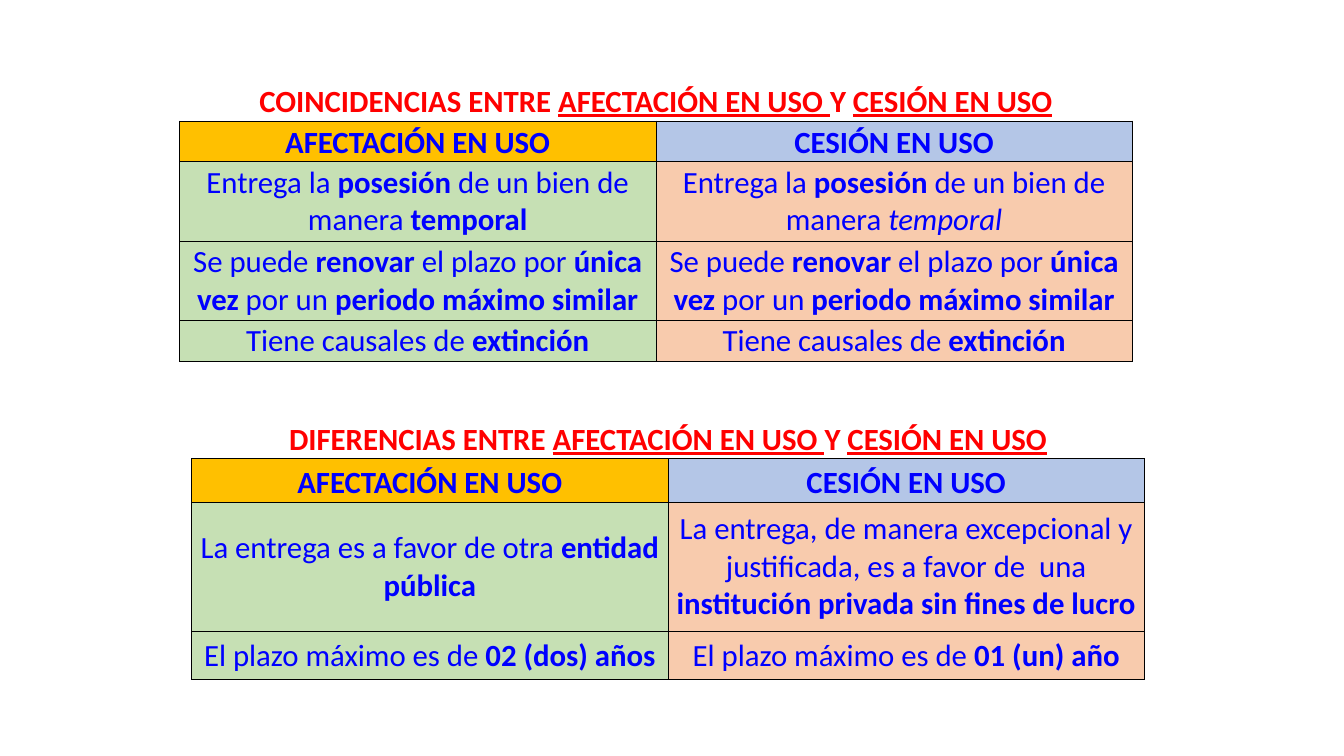
from lxml import etree
from pptx import Presentation
from pptx.dml.color import RGBColor
from pptx.enum.text import MSO_ANCHOR, PP_ALIGN
from pptx.oxml.ns import qn
from pptx.util import Inches, Pt

BOTTOM, MIDDLE = MSO_ANCHOR.BOTTOM, MSO_ANCHOR.MIDDLE
CENTER = PP_ALIGN.CENTER
RED = RGBColor(0xFF, 0x00, 0x00)
BLUE = RGBColor(0x00, 0x00, 0xFF)
HEADS = RGBColor(0xFF, 0xC0, 0x00), RGBColor(0xB4, 0xC6, 0xE7)
BODY = RGBColor(0xC6, 0xE0, 0xB4), RGBColor(0xF8, 0xCB, 0xAD)
PLAIN = "{2D5ABB26-0587-4C30-8999-92F81FD0307C}"  # no style, no grid

NAMES = "AFECTACIÓN EN USO", "CESIÓN EN USO"
RENEW = "Se puede *renovar* el plazo por *única vez* por un *periodo máximo similar*"
ENDS = "Tiene causales de *extinción*"
GIVES = "Entrega la *posesión* de un bien de manera "

ALIKE = [
    (GIVES + "*temporal*", GIVES + "*/temporal*"),
    (RENEW, RENEW),
    (ENDS, ENDS),
]
DIFFER = [
    ("La entrega es a favor de otra *entidad pública*",
     "La entrega, de manera excepcional y justificada, es a favor de  una "
     "*institución privada sin fines de lucro*"),
    ("El plazo máximo es de *02 (dos) años*",
     "El plazo máximo es de *01 (un) año*"),
]


def border(cell, sides):
    """Draw thin black lines on the given sides (L, R, T, B)."""
    props = cell._tc.get_or_add_tcPr()
    for side in sides:
        line = etree.SubElement(props, qn("a:ln" + side), w=str(Pt(0.5)))
        fill = etree.SubElement(line, qn("a:solidFill"))
        etree.SubElement(fill, qn("a:srgbClr"), val="000000")


def write(cell, text, color, anchor, title=False, head=False):
    """Write text; parts between stars stand out, a slash makes them italic."""
    cell.margin_left = cell.margin_right = cell.margin_top = Inches(0.01)
    cell.margin_bottom = 0
    cell.vertical_anchor = anchor
    para = cell.text_frame.paragraphs[0]
    para.alignment = CENTER
    for i, part in enumerate(text.split("*")):
        if not part:
            continue
        run = para.add_run()
        run.text = part.lstrip("/")
        font = run.font
        font.name, font.size = "Calibri", Pt(22)
        font.color.rgb = color
        marked = i % 2 == 1
        slanted = part.startswith("/")
        font.bold = title or head or (marked and not slanted)
        font.italic = slanted
        font.underline = title and marked


def compare(slide, box, title, pairs, heights):
    """Place a two-column comparison with its title row in the box."""
    left, top, width = box
    frame = slide.shapes.add_table(
        len(heights), 2, Inches(left), Inches(top),
        Inches(width), Inches(sum(heights)))
    table = frame.table
    table.first_row = table.horz_banding = False
    table._tbl.tblPr.find(qn("a:tableStyleId")).text = PLAIN
    for col in table.columns:
        col.width = Inches(width / 2)
    for row, high in zip(table.rows, heights):
        row.height = Inches(high)

    # Title row
    first = table.cell(0, 0)
    first.merge(table.cell(0, 1))
    for c in range(2):
        border(table.cell(0, c), "B")
    write(first, f"{title} ENTRE *{NAMES[0]} *Y *{NAMES[1]}*",
          RED, BOTTOM, title=True)

    # Column heads and body rows
    for r, texts in enumerate([NAMES] + pairs, 1):
        head = r == 1
        for c, text in enumerate(texts):
            cell = table.cell(r, c)
            border(cell, "LRTB")
            cell.fill.solid()
            cell.fill.fore_color.rgb = (HEADS if head else BODY)[c]
            write(cell, text, BLUE, BOTTOM if head else MIDDLE, head=head)


def main():
    deck = Presentation()
    deck.slide_width, deck.slide_height = Inches(13.33), Inches(7.5)
    slide = deck.slides.add_slide(deck.slide_layouts[6])
    compare(slide, (1.78, 0.6, 9.45), "COINCIDENCIAS", ALIKE,
            [0.6, 0.4, 0.79, 0.79, 0.4])
    compare(slide, (1.9, 3.91, 9.45), "DIFERENCIAS", DIFFER,
            [0.64, 0.43, 1.28, 0.48])
    deck.save("out.pptx")


if __name__ == "__main__":
    main()
